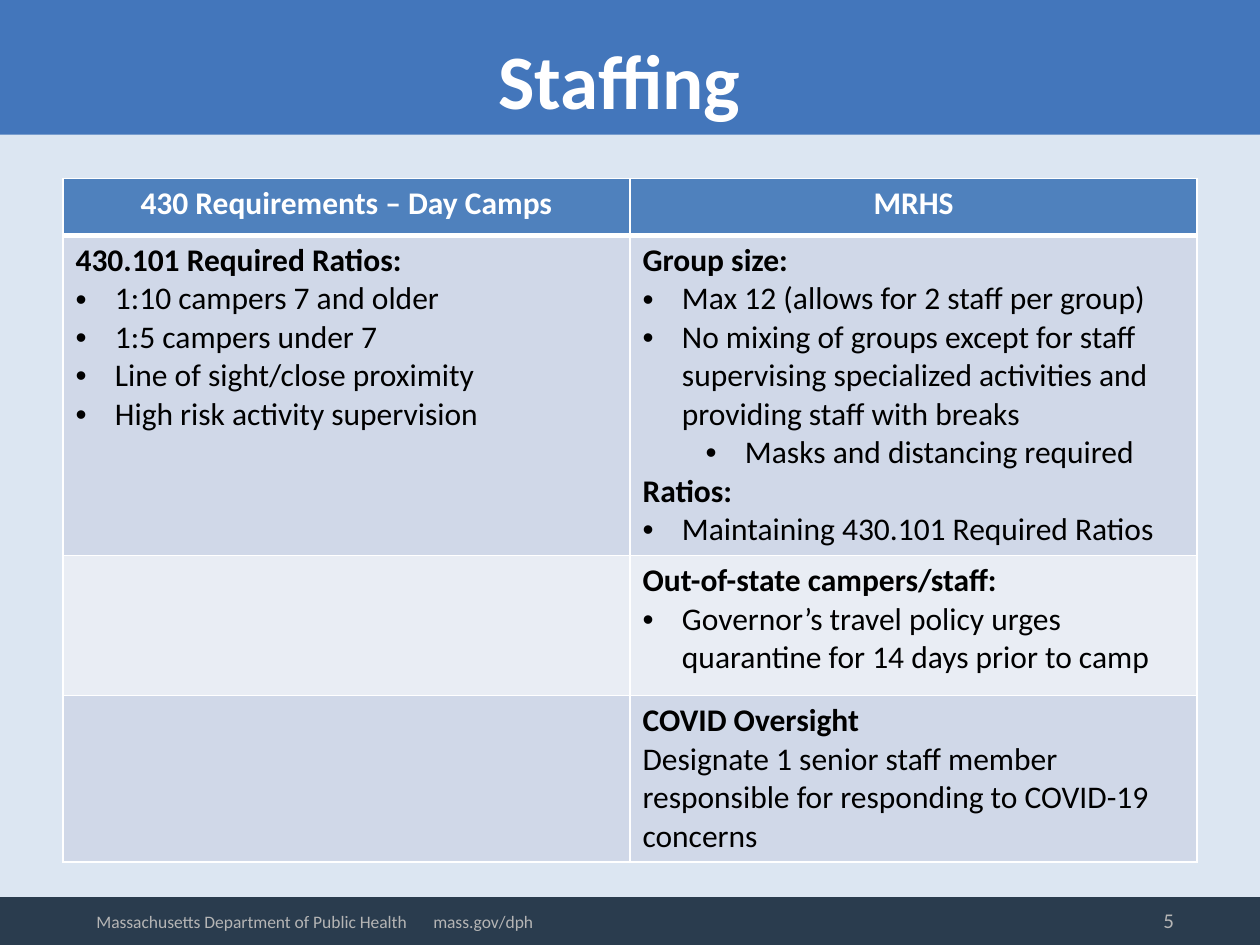
from dataclasses import dataclass

from lxml import etree
from pptx import Presentation
from pptx.dml.color import RGBColor
from pptx.enum.shapes import MSO_SHAPE
from pptx.enum.text import MSO_ANCHOR, PP_ALIGN
from pptx.oxml.ns import qn
from pptx.util import Pt

RECT = MSO_SHAPE.RECTANGLE
MIDDLE = MSO_ANCHOR.MIDDLE
LEFT, CENTER, RIGHT = PP_ALIGN.LEFT, PP_ALIGN.CENTER, PP_ALIGN.RIGHT
TITLE_ONLY = 5
HEAD, PLAIN, BULLET, SUB = "head", "plain", "bullet", "sub"
INDENTS = {BULLET: 22.5, SUB: 58.5}
HANGING = 22.5


@dataclass(frozen=True)
class Theme:
    """Colours, font and type sizes of the slide."""
    font: str = "Calibri"
    background: str = "DCE6F2"
    banner: str = "4376BB"
    footer: str = "2A3C4E"
    footer_text: str = "B5B5B5"
    header: str = "4F81BD"
    bands: tuple = ("D0D8E8", "E9EDF4")
    white: str = "FFFFFF"
    black: str = "000000"
    title_size: int = 44
    body_size: int = 18
    number_size: int = 12
    footer_size: int = 10


THEME = Theme()

HEADERS = ["430 Requirements – Day Camps", "MRHS"]
ROWS = [
    (
        [(HEAD, "430.101 Required Ratios:"),
         (BULLET, "1:10 campers 7 and older"),
         (BULLET, "1:5 campers under 7"),
         (BULLET, "Line of sight/close proximity"),
         (BULLET, "High risk activity supervision")],
        [(HEAD, "Group size:"),
         (BULLET, "Max 12 (allows for 2 staff per group)"),
         (BULLET, "No mixing of groups except for staff supervising "
                  "specialized activities and providing staff with breaks"),
         (SUB, "Masks and distancing required"),
         (HEAD, "Ratios:"),
         (BULLET, "Maintaining 430.101 Required Ratios")],
    ),
    (
        [],
        [(HEAD, "Out-of-state campers/staff:"),
         (BULLET, "Governor’s travel policy urges quarantine for 14 days "
                  "prior to camp")],
    ),
    (
        [],
        [(HEAD, "COVID Oversight"),
         (PLAIN, "Designate 1 senior staff member responsible for responding "
                 "to COVID-19 concerns")],
    ),
]
ROW_HEIGHTS = [32.4, 152, 80, 80]


def points(box):
    """Turn a box in points into lengths."""
    return [Pt(v) for v in box]


def style(p, size, color, bold=False, align=LEFT):
    """Format one paragraph."""
    p.alignment = align
    p.font.name = THEME.font
    p.font.size = Pt(size)
    p.font.bold = bold
    p.font.color.rgb = RGBColor.from_string(color)


def add_band(s, box, color):
    """Draw a plain full-width band."""
    sp = s.shapes.add_shape(RECT, *points(box))
    sp.shadow.inherit = False
    sp.fill.solid()
    sp.fill.fore_color.rgb = RGBColor.from_string(color)
    sp.line.fill.background()


def add_label(s, box, text, size, align=LEFT):
    """Add a line of footer text and return its paragraph."""
    tf = s.shapes.add_textbox(*points(box)).text_frame
    tf.word_wrap = True
    tf.vertical_anchor = MIDDLE
    p = tf.paragraphs[0]
    p.text = text
    style(p, size, THEME.footer_text, align=align)
    return p


def add_banner(s, box, text):
    """Draw the banner and place the title over it."""
    x, y, w, h = box
    add_band(s, box, THEME.banner)
    title = s.shapes.title
    title.left, title.top, title.width, title.height = points(
        (x + 30, y, w - 72, h + 13))
    title.text_frame.vertical_anchor = MIDDLE
    p = title.text_frame.paragraphs[0]
    p.text = text
    style(p, THEME.title_size, THEME.white, True, CENTER)
    title.element.getparent().append(title.element)


def add_footer(s, box, source, address, number):
    """Draw the footer band with its source line and page number."""
    x, y, w, h = box
    add_band(s, box, THEME.footer)
    add_label(s, (x + w - 203, y - 1.5, 161, 29), number,
              THEME.number_size, RIGHT)
    p = add_label(s, (x + 48, y, 300, h), f"{source}\t{address}",
                  THEME.footer_size)
    tabs = etree.SubElement(p._p.get_or_add_pPr(), qn("a:tabLst"))
    etree.SubElement(tabs, qn("a:tab"), pos=str(Pt(192.5)), algn="l")


def set_borders(cell, top=1, bottom=1):
    """Rule a cell in white with the given top and bottom widths."""
    tc_pr = cell._tc.get_or_add_tcPr()
    for side, width in (("L", 1), ("R", 1), ("T", top), ("B", bottom)):
        ln = etree.SubElement(tc_pr, qn(f"a:ln{side}"), w=str(Pt(width)))
        fill = etree.SubElement(ln, qn("a:solidFill"))
        etree.SubElement(fill, qn("a:srgbClr"), val=THEME.white)


def fill_cell(cell, items, fill, color, align=LEFT):
    """Fill a cell with headings, bullets and plain paragraphs."""
    cell.fill.solid()
    cell.fill.fore_color.rgb = RGBColor.from_string(fill)
    tf = cell.text_frame
    for i, (kind, text) in enumerate(items):
        p = tf.add_paragraph() if i else tf.paragraphs[0]
        p.text = text
        style(p, THEME.body_size, color, kind == HEAD, align)
        if kind in INDENTS:
            p.level = int(kind == SUB)
            p_pr = p._p.get_or_add_pPr()
            p_pr.set("marL", str(Pt(INDENTS[kind])))
            p_pr.set("indent", str(-Pt(HANGING)))
            bullet_font = etree.Element(qn("a:buFont"), typeface="Arial")
            bullet = etree.Element(qn("a:buChar"), char="•")
            p_pr.insert(0, bullet_font)
            p_pr.insert(1, bullet)


def add_comparison(s, box):
    """Build the two-column comparison table."""
    table = s.shapes.add_table(len(ROW_HEIGHTS), len(HEADERS),
                               *points(box)).table
    table.horz_banding = False
    for row, height in zip(table.rows, ROW_HEIGHTS):
        row.height = Pt(height)
    for c, text in enumerate(HEADERS):
        cell = table.cell(0, c)
        set_borders(cell, bottom=3)
        fill_cell(cell, [(HEAD, text)], THEME.header, THEME.white, CENTER)
    for r, row in enumerate(ROWS, 1):
        for c, items in enumerate(row):
            cell = table.cell(r, c)
            set_borders(cell, top=3 if r == 1 else 1)
            fill_cell(cell, items, THEME.bands[(r - 1) % 2], THEME.black)


def main():
    """Build and save the slide."""
    prs = Presentation()
    prs.slide_width, prs.slide_height = Pt(720), Pt(540)
    s = prs.slides.add_slide(prs.slide_layouts[TITLE_ONLY])
    s.background.fill.solid()
    s.background.fill.fore_color.rgb = RGBColor.from_string(THEME.background)
    add_banner(s, (0, 0, 720, 77), "Staffing")
    add_comparison(s, (36, 102, 648, sum(ROW_HEIGHTS)))
    add_footer(s, (0, 512.6, 720, 27.4),
               "Massachusetts Department of Public Health",
               "mass.gov/dph", "5")
    prs.save("out.pptx")


if __name__ == "__main__":
    main()
